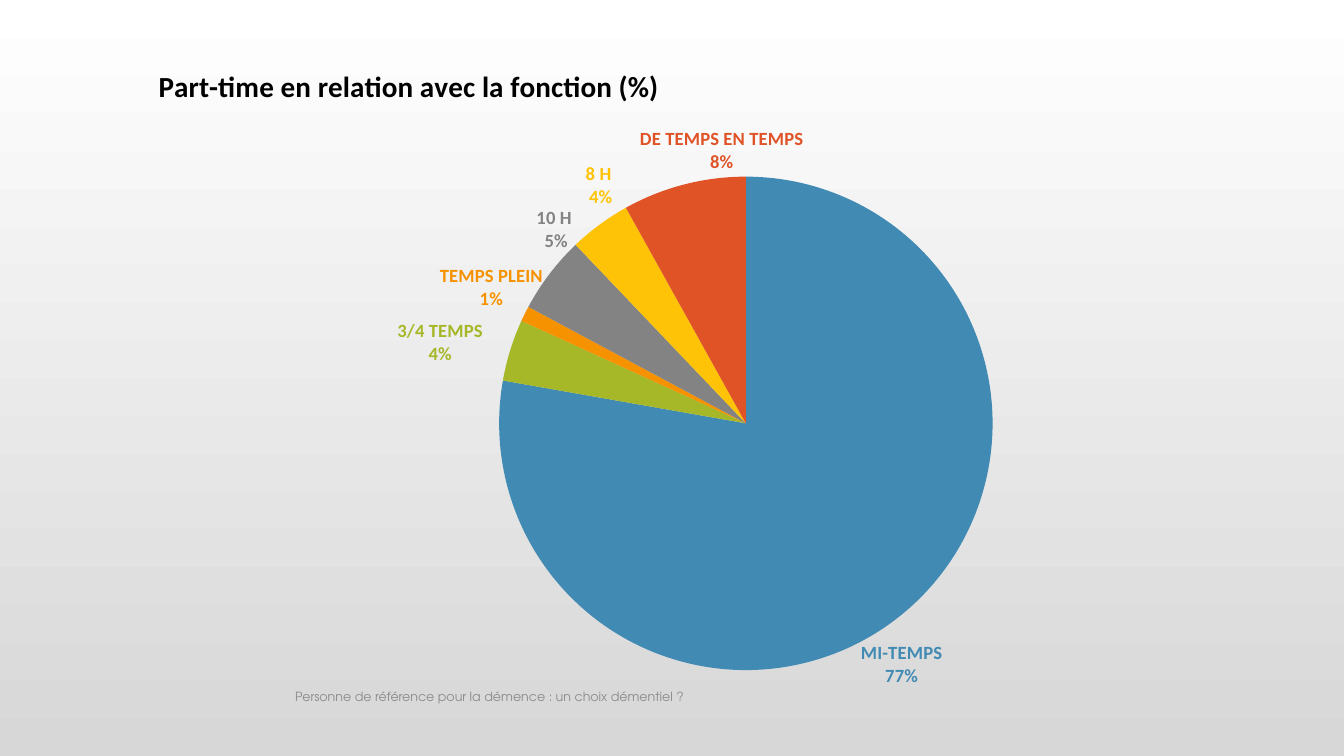
from dataclasses import dataclass

from lxml import etree
from pptx import Presentation
from pptx import util as u
from pptx.chart import data
from pptx.dml import color
from pptx.enum import chart as ch, text
from pptx.oxml import ns


@dataclass(frozen=True)
class Theme:
    black: str = "000000"
    footer: str = "8C8C8C"
    back_top: str = "FFFFFF"
    back_bottom: str = "D7D7D7"
    head_font: str = "Calibri"
    body_font: str = "TeX Gyre Adventor"
    title_size: float = 20.8
    label_size: float = 13.3
    base_size: float = 10
    footer_size: float = 9


T = Theme()
CHART_W, CHART_H = 768.2, 468.7


def style(font, name, size, rgb, bold=False):
    font.name = name
    font.size = u.Pt(size)
    font.bold = bold
    font.color.rgb = color.RGBColor.from_string(rgb)


def place(parent, index, modes, **lengths):
    for old in parent.findall(ns.qn("c:layout")):
        parent.remove(old)
    layout = etree.Element(ns.qn("c:layout"))
    manual = etree.SubElement(layout, ns.qn("c:manualLayout"))
    for tag, value in modes.items():
        etree.SubElement(manual, ns.qn("c:" + tag)).set("val", value)
    for tag, points in lengths.items():
        share = points / (CHART_W if tag in "xw" else CHART_H)
        etree.SubElement(manual, ns.qn("c:" + tag)).set("val", f"{share:.5f}")
    parent.insert(index, layout)


SLICES = [
    ("MI-TEMPS", 77, "418AB3", -33.8, 17.4),
    ("3/4 TEMPS", 4, "A6B727", -15.4, 12.7),
    ("TEMPS PLEIN", 1, "F69200", 16.8, 0),
    ("10 H ", 5, "838383", 22.4, -12.3),
    ("8 H ", 4, "FEC306", 14.1, -8),
    ("DE TEMPS EN TEMPS", 8, "DF5327", 86.7, -3.3),
]

prs = Presentation()
prs.slide_width, prs.slide_height = u.Pt(960), u.Pt(540)
s = prs.slides.add_slide(prs.slide_layouts[6])

fill = s.background.fill
fill.gradient()
fill.gradient_angle = 270
for stop, rgb in zip(fill.gradient_stops, (T.back_top, T.back_bottom)):
    stop.color.rgb = color.RGBColor.from_string(rgb)

cd = data.CategoryChartData(number_format='0"%"')
cd.categories = [row[0] for row in SLICES]
cd.add_series("Series 1", [row[1] for row in SLICES])
chart = s.shapes.add_chart(
    ch.XL_CHART_TYPE.PIE, u.Pt(103), u.Pt(43.2), u.Pt(CHART_W), u.Pt(CHART_H), cd
).chart
style(chart.font, T.body_font, T.base_size, T.black)
chart.has_legend = False

chart.has_title = True
p = chart.chart_title.text_frame.paragraphs[0]
r = p.add_run()
r.text = "Part-time en relation avec la fonction (%)"
style(r.font, T.head_font, T.title_size, T.black, True)
chart.chart_title.include_in_layout = False
edges = {"xMode": "edge", "yMode": "edge"}
title = chart.element.find(".//" + ns.qn("c:title"))
place(title, 1, edges, x=6.5, y=0)

plot_area = chart.element.find(".//" + ns.qn("c:plotArea"))
place(plot_area, 0, {"layoutTarget": "inner", **edges},
      x=106.8, y=83, w=646, h=352.5)

plot = chart.plots[0]
plot.vary_by_categories = True
series = plot.series[0]
for i, (name, value, rgb, dx, dy) in enumerate(SLICES):
    point = series.points[i]
    point.format.fill.solid()
    point.format.fill.fore_color.rgb = color.RGBColor.from_string(rgb)
    point.format.line.fill.background()
    label = point.data_label
    style(label.font, T.head_font, T.label_size, rgb, True)
    label.position = ch.XL_LABEL_POSITION.OUTSIDE_END

for xml, (name, value, rgb, dx, dy) in zip(
    chart.element.findall(".//" + ns.qn("c:dLbl")), SLICES
):
    place(xml, 1, {}, x=dx, y=dy)
    number = etree.Element(ns.qn("c:numFmt"), formatCode='0"%"', sourceLinked="0")
    xml.insert(2, number)
    xml.find(ns.qn("c:showCatName")).set("val", "1")
    etree.SubElement(xml, ns.qn("c:separator")).text = "\n"

for leader in chart.element.findall(".//" + ns.qn("c:showLeaderLines")):
    leader.set("val", "0")

sp = s.shapes.add_textbox(u.Pt(203.8), u.Pt(483.1), u.Pt(599.8), u.Pt(28.8))
tf = sp.text_frame
tf.word_wrap = True
tf.vertical_anchor = text.MSO_ANCHOR.MIDDLE
r = tf.paragraphs[0].add_run()
r.text = "Personne de référence pour la démence : un choix démentiel ?"
style(r.font, T.body_font, T.footer_size, T.footer)

prs.save("out.pptx")
